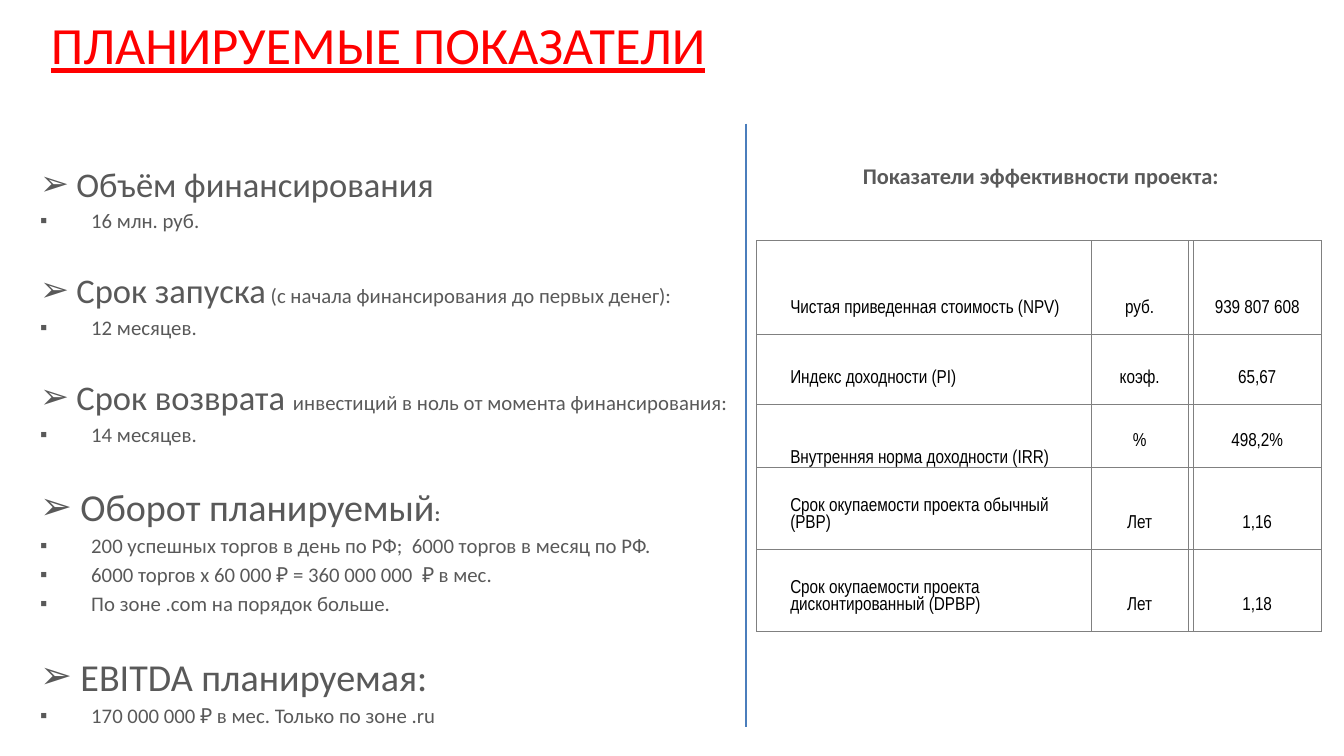
from dataclasses import dataclass

from lxml.etree import SubElement
from pptx import Presentation
from pptx.dml.color import RGBColor
from pptx.enum.shapes import MSO_CONNECTOR
from pptx.enum.text import MSO_ANCHOR, PP_ALIGN
from pptx.oxml import parse_xml
from pptx.oxml.ns import nsdecls, qn
from pptx.util import Inches, Pt


@dataclass(frozen=True)
class Theme:
    red: str = "FF0000"
    gray: str = "595959"
    black: str = "000000"
    divider: str = "4B7EBC"
    border: str = "808080"
    body_font: str = "Calibri"
    table_font: str = "Arial Narrow"
    title: float = 28
    head: float = 18.5
    big_head: float = 20.4
    body: float = 11.1
    caption: float = 12
    cell: float = 10


class SlideBuilder:
    def __init__(self, slide, theme):
        self.s, self.t = slide, theme

    def run(self, p, text, color, name=None, **fmt):
        r = p.add_run()
        r.text = text
        for key, value in {"name": name or self.t.body_font, **fmt}.items():
            setattr(r.font, key, value)
        r.font.color.rgb = RGBColor.from_string(color)

    def text_box(self, x, y, w, h, **fmt):
        tf = self.s.shapes.add_textbox(*map(Inches, (x, y, w, h))).text_frame
        for key, value in {"word_wrap": True, **fmt}.items():
            setattr(tf, key, value)
        return tf

    def bullet(self, p, char, indent):
        pPr = p._p.get_or_add_pPr()
        pPr.set("marL", str(Inches(indent)))
        pPr.set("indent", str(-Inches(indent)))
        SubElement(pPr, qn("a:buFont"), typeface="Arial")
        SubElement(pPr, qn("a:buChar"), char=char)

    def outline(self, tf, sections):
        """Arrow-marked heads, each followed by square-marked items."""
        t = self.t
        p = tf.paragraphs[0]
        for i, (head, detail, size, items) in enumerate(sections):
            if i:
                p = tf.add_paragraph()
                p.space_before = Pt(size * 0.2 + 15.7)
            self.bullet(p, "➢", round(size * 0.0145, 2))
            self.run(p, head, t.gray, size=Pt(size))
            if detail:
                self.run(p, detail, t.gray, size=Pt(t.body),
                         bold=detail == ":")
            for item in items:
                p = tf.add_paragraph()
                p.space_before = Pt(2.2)
                self.bullet(p, "▪", 0.38)
                self.run(p, item, t.gray, size=Pt(t.body))

    def line(self, x1, y1, x2, y2, color, width):
        c = self.s.shapes.add_connector(
            MSO_CONNECTOR.STRAIGHT, *map(Inches, (x1, y1, x2, y2)))
        c.line.color.rgb = RGBColor.from_string(color)
        c.line.width = Pt(width)
        SubElement(c._element.spPr, qn("a:effectLst"))

    def borders(self, cell, shown):
        tcPr = cell._tc.get_or_add_tcPr()
        solid = f'<a:solidFill><a:srgbClr val="{self.t.border}"/></a:solidFill>'
        for i, side in enumerate("LRTB"):
            fill = solid if side in shown else "<a:noFill/>"
            tcPr.insert(i, parse_xml(
                f'<a:ln{side} {nsdecls("a")} w="{Pt(0.5)}">{fill}</a:ln{side}>'))

    def table(self, x, y, widths, heights, rows):
        """Rows beyond the given texts stay empty and unruled."""
        table = self.s.shapes.add_table(
            len(heights), len(widths), Inches(x), Inches(y),
            Inches(sum(widths)), Inches(sum(heights))).table
        table.first_row = table.horz_banding = False
        for col, w in zip(table.columns, widths):
            col.width = Inches(w)
        for n, (row, h) in enumerate(zip(table.rows, heights)):
            row.height = Inches(h)
            texts = rows[n] if n < len(rows) else [""] * len(widths)
            shown = "LRTB" if n < len(rows) else "T" if n == len(rows) else ""
            for i, (cell, text) in enumerate(zip(row.cells, texts)):
                # The IRR label sits on the bottom edge of its row
                bottom = 0.13 if text and "IRR" not in text else 0
                fmt = {"vertical_anchor": MSO_ANCHOR.BOTTOM,
                       "margin_left": Inches(0 if i else 0.25),
                       "margin_right": 0, "margin_top": 0,
                       "margin_bottom": Inches(bottom)}
                for key, value in fmt.items():
                    setattr(cell, key, value)
                cell.fill.background()
                self.borders(cell, shown)
                p = cell.text_frame.paragraphs[0]
                p.alignment = PP_ALIGN.CENTER if i else PP_ALIGN.LEFT
                if text:
                    self.run(p, text, self.t.black, self.t.table_font,
                             size=Pt(self.t.cell))


def main():
    t = Theme()
    prs = Presentation()
    prs.slide_width = Inches(10)
    prs.slide_height = prs.slide_width * 9 // 16
    b = SlideBuilder(prs.slides.add_slide(prs.slide_layouts[6]), t)

    # Title
    tf = b.text_box(0.28, 0.14, 5.51, 0.47, margin_top=0,
                    margin_bottom=Inches(0.05),
                    vertical_anchor=MSO_ANCHOR.BOTTOM)
    b.run(tf.paragraphs[0], "ПЛАНИРУЕМЫЕ ПОКАЗАТЕЛИ", t.red,
          size=Pt(t.title), underline=True)

    # Planned figures
    tf = b.text_box(0.2, 0.92, 5.35, 4.57, margin_top=Inches(0.29))
    b.outline(tf, [
        ("Объём финансирования", "", t.head, ["16 млн. руб."]),
        ("Срок запуска", " (c начала финансирования до первых денег):",
         t.head, ["12 месяцев."]),
        ("Срок возврата ", "инвестиций в ноль от момента финансирования:",
         t.head, ["14 месяцев."]),
        ("Оборот планируемый", ":", t.big_head, [
            "200 успешных торгов в день по РФ;  6000 торгов в месяц по РФ.",
            "6000 торгов x 60 000 ₽ = 360 000 000  ₽ в мес.",
            "По зоне .com на порядок больше."]),
        ("EBITDA планируемая:", "", t.big_head,
         ["170 000 000 ₽ в мес. Только по зоне .ru"]),
    ])

    # Table caption
    tf = b.text_box(6.1, 0.92, 3.29, 4.57, margin_top=Inches(0.29))
    p = tf.paragraphs[0]
    p.alignment = PP_ALIGN.CENTER
    b.run(p, "Показатели эффективности проекта:", t.gray,
          size=Pt(t.caption), bold=True)

    # Divider
    b.line(5.55, 0.92, 5.55, 5.41, t.divider, 0.75)

    # Efficiency indicators; the narrow third column makes a double rule
    b.table(5.63, 1.79, [2.49, 0.72, 0.03, 0.95],
            [0.7, 0.52, 0.47, 0.61, 0.61, 0.32, 0.32], [
        ("Чистая приведенная стоимость (NPV)", "руб.", "", "939 807 608"),
        ("Индекс доходности (PI)", "коэф.", "", "65,67"),
        ("Внутренняя норма доходности (IRR)", "%", "", "498,2%"),
        ("Срок окупаемости проекта обычный (PBP)", "Лет", "", "1,16"),
        ("Срок окупаемости проекта дисконтированный (DPBP)",
         "Лет", "", "1,18"),
    ])

    prs.save("out.pptx")


if __name__ == "__main__":
    main()
